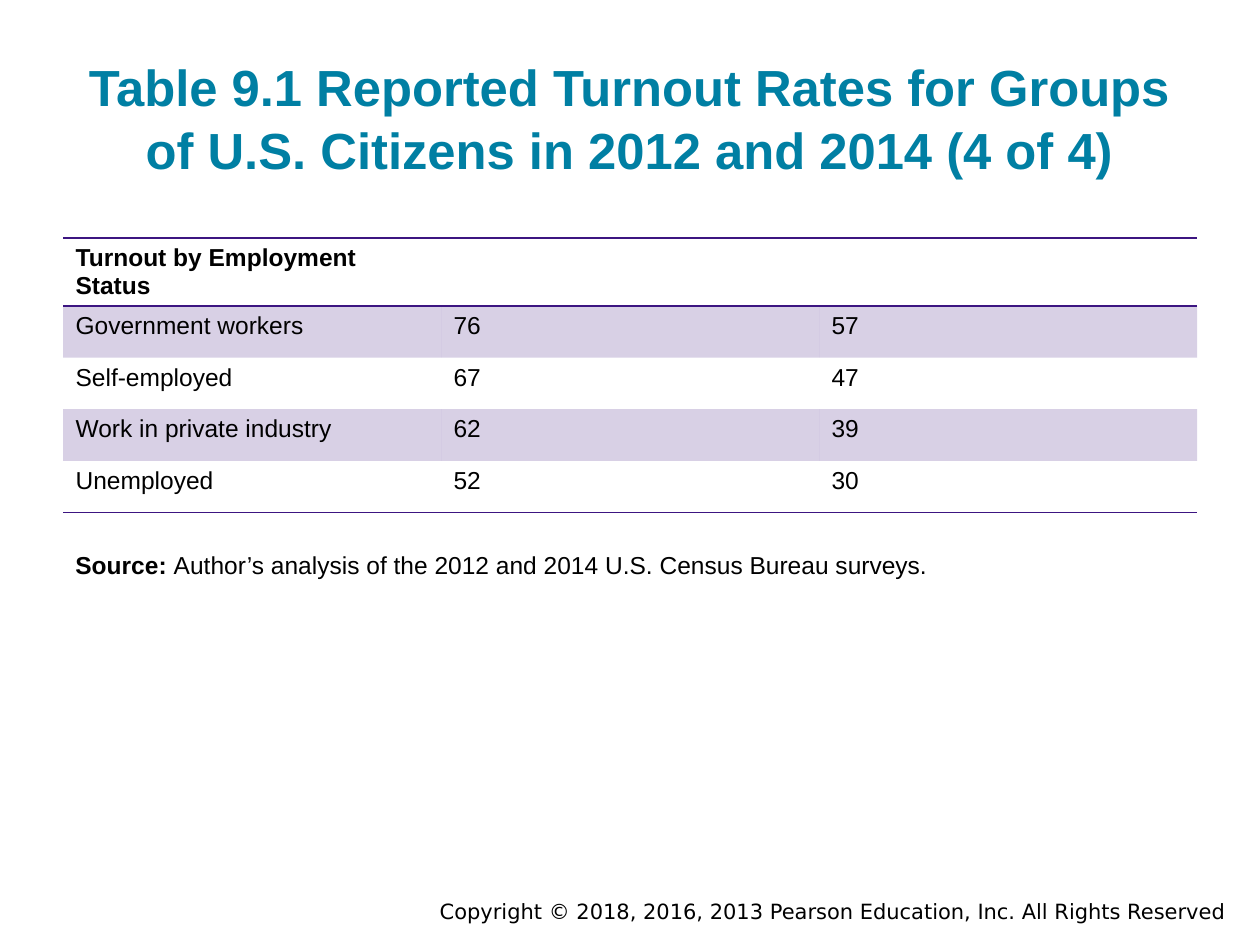
import pptx
import pptx.util
import pptx.dml.color
import pptx.enum.text
import pptx.oxml
import pptx.oxml.ns

Inch, Pt = pptx.util.Inches, pptx.util.Pt
RGB = pptx.dml.color.RGBColor.from_string
Align, Anchor = pptx.enum.text.PP_ALIGN, pptx.enum.text.MSO_ANCHOR

theme = {
    "teal": "007FA3", "black": "000000", "purple": "3C1581", "tint": 20000,
    "face": "Arial", "small face": "DejaVu Sans",
    "title": 29, "text": 14, "small": 12, "rule": 1,
}


def write(frame, text, size="text", face="face", color="black", bold=False,
          align=Align.LEFT):
    line = frame.paragraphs[0]
    line.alignment = align
    run = line.add_run()
    run.text = text
    run.font.size = Pt(theme[size])
    run.font.name = theme[face]
    run.font.color.rgb = RGB(theme[color])
    run.font.bold = bold
    return line


def rule(cell, side):
    cell._tc.get_or_add_tcPr().append(pptx.oxml.parse_xml(
        f'<a:{side} {pptx.oxml.ns.nsdecls("a")} w="{Pt(theme["rule"])}">'
        f'<a:solidFill><a:srgbClr val="{theme["purple"]}"/></a:solidFill>'
        f'</a:{side}>'))


deck = pptx.Presentation()
deck.slide_width, deck.slide_height = Inch(10), Inch(7.5)
slide = deck.slides.add_slide(deck.slide_layouts[5])
left, wide = Inch(0.5), Inch(9)

title = slide.shapes.title
title.left, title.top, title.width, title.height = left, Inch(0.32), wide, Inch(1.21)
frame = title.text_frame
frame.word_wrap = True
frame.auto_size = pptx.enum.text.MSO_AUTO_SIZE.NONE
frame.vertical_anchor = Anchor.BOTTOM
frame.margin_top = frame.margin_bottom = Inch(0.1)
line = write(frame, "Table 9.1 Reported Turnout Rates for Groups of U.S. Citizens in 2012 and 2014 (4 of 4)",
             size="title", color="teal", bold=True, align=Align.CENTER)
line.line_spacing = 1.05

rows = [
    ("Turnout by Employment Status", "", ""),
    ("Government workers", "76", "57"),
    ("Self-employed", "67", "47"),
    ("Work in private industry", "62", "39"),
    ("Unemployed", "52", "30"),
]
high = Inch(0.41)
table = slide.shapes.add_table(len(rows), 3, left, Inch(1.89), wide, high * len(rows)).table
table.first_row = table.horz_banding = False
style = table._tbl.tblPr.find(pptx.oxml.ns.qn("a:tableStyleId"))
style.text = "{2D5ABB26-0587-4C30-8999-92F81FD0307C}"
for r, row in enumerate(rows):
    table.rows[r].height = high
    for c, text in enumerate(row):
        cell = table.cell(r, c)
        if text:
            write(cell.text_frame, text, bold=r == 0)
        if r == 0:
            rule(cell, "lnT")
        if r in (0, len(rows) - 1):
            rule(cell, "lnB")
        if r % 2:
            cell.fill.solid()
            cell.fill.fore_color.rgb = RGB(theme["purple"])
            shade = cell._tc.tcPr.find(".//" + pptx.oxml.ns.qn("a:srgbClr"))
            shade.append(pptx.oxml.parse_xml(
                f'<a:alpha {pptx.oxml.ns.nsdecls("a")} val="{theme["tint"]}"/>'))
        else:
            cell.fill.background()

source = slide.shapes.add_textbox(left, Inch(4.32), Inch(8.25), Inch(0.34)).text_frame
source.word_wrap = True
write(source, "Source: ", bold=True)
write(source, "Author’s analysis of the 2012 and 2014 U.S. Census Bureau surveys.")

foot = slide.shapes.add_textbox(Inch(2), Inch(7.08), Inch(7.83), Inch(0.3)).text_frame
foot.word_wrap = True
write(foot, "Copyright © 2018, 2016, 2013 Pearson Education, Inc. All Rights Reserved",
      size="small", face="small face", align=Align.RIGHT)

deck.save("out.pptx")
